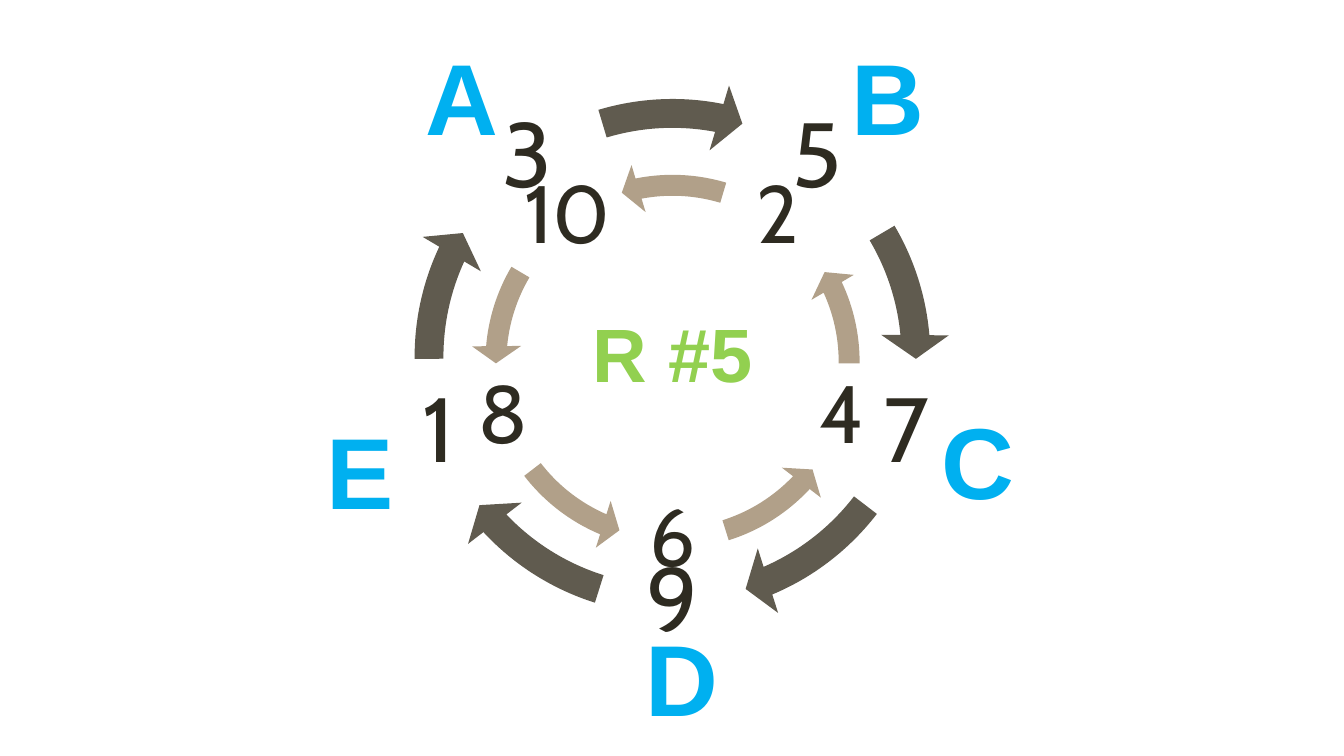
"""Build a five-corner rotation diagram with two rings of numbers and arrows."""
import math
from dataclasses import dataclass

from pptx import Presentation
from pptx.dml.color import RGBColor
from pptx.enum.shapes import MSO_SHAPE
from pptx.enum.text import MSO_ANCHOR, PP_ALIGN
from pptx.util import Inches, Pt

CLOCKWISE = MSO_SHAPE.CIRCULAR_ARROW
COUNTERCLOCKWISE = MSO_SHAPE.LEFT_CIRCULAR_ARROW
MIDDLE = MSO_ANCHOR.MIDDLE
CENTER = PP_ALIGN.CENTER


@dataclass(frozen=True)
class Theme:
    number_font: str = "Cabin"
    label_font: str = "Arial"
    number: str = "2E2B21"
    corner: str = "00B0F0"
    round_label: str = "92D050"
    outer_arrow: str = "605B4F"
    inner_arrow: str = "B1A089"
    outer_size: int = 65
    inner_size: int = 58
    corner_size: int = 72
    round_size: int = 54


THEME = Theme()
CENTER_X = 6.67

RINGS = [
    {
        "numbers": ["5", "7", "9", "1", "3"],
        "first_angle": -54, "step": 72,
        "center_y": 3.54, "radius": 2.44, "box": 1.47, "arrow_size": 5.5,
        "direction": CLOCKWISE,
        "head_tail_angles": [(354.88, 329.44), (66.91, 37.56), (136.84, 107.5),
                             (204.96, 179.52), (281.09, 253.31)],
        "color": THEME.outer_arrow, "size": THEME.outer_size,
    },
    {
        "numbers": ["10", "8", "6", "4", "2"],
        "first_angle": 234, "step": -72,
        "center_y": 3.59, "radius": 1.77, "box": 1.06, "arrow_size": 3.99,
        "direction": COUNTERCLOCKWISE,
        "head_tail_angles": [(185.11, 210.56), (113.09, 142.44), (43.16, 72.51),
                             (335.04, 0.49), (258.91, 286.69)],
        "color": THEME.inner_arrow, "size": THEME.inner_size,
    },
]
CORNERS = [("A", 4.12, 0.29), ("B", 8.35, 0.29), ("C", 9.24, 3.91),
           ("D", 6.3, 6.06), ("E", 3.14, 4.01)]
CORNER_BOX = (1.08, 1.31)
ROUND_LABEL = ("R #5", 5.78, 3, 1.8, 1.01)

ARROW_THICKNESS = 0.052
ARROW_HEAD_ANGLE = 3.36
ARROW_HEAD_WIDTH = 0.061
ADJUSTMENT_PER_DEGREE = 0.6


def add_label(shapes, wording, left, top, width, height, font_name, size, color, bold=False):
    label = shapes.add_textbox(Inches(left), Inches(top), Inches(width), Inches(height))
    frame = label.text_frame
    frame.text = wording
    frame.word_wrap = True
    font = frame.paragraphs[0].runs[0].font
    font.name = font_name
    font.size = Pt(size)
    font.bold = bold
    font.color.rgb = RGBColor.from_string(color)
    return frame


def add_number(shapes, ring, number, angle):
    box = ring["box"]
    left = CENTER_X + ring["radius"] * math.cos(math.radians(angle)) - box / 2
    top = ring["center_y"] + ring["radius"] * math.sin(math.radians(angle)) - box / 2
    frame = add_label(shapes, number, left, top, box, box,
                      THEME.number_font, ring["size"], THEME.number)
    frame.margin_left = frame.margin_right = frame.margin_top = frame.margin_bottom = 0
    frame.vertical_anchor = MIDDLE
    frame.paragraphs[0].alignment = CENTER
    frame.paragraphs[0].line_spacing = 0.9


def add_arrow(shapes, ring, head_angle, tail_angle):
    size = ring["arrow_size"]
    arrow = shapes.add_shape(ring["direction"], Inches(CENTER_X - size / 2),
                             Inches(ring["center_y"] - size / 2), Inches(size), Inches(size))
    settings = [ARROW_THICKNESS, ARROW_HEAD_ANGLE, head_angle * ADJUSTMENT_PER_DEGREE,
                tail_angle * ADJUSTMENT_PER_DEGREE, ARROW_HEAD_WIDTH]
    for index, setting in enumerate(settings):
        arrow.adjustments[index] = setting
    arrow.shadow.inherit = False
    arrow.fill.solid()
    arrow.fill.fore_color.rgb = RGBColor.from_string(ring["color"])
    arrow.line.fill.background()


def add_ring(slide, ring):
    shapes = slide.shapes.add_group_shape().shapes
    for position, (number, angles) in enumerate(zip(ring["numbers"], ring["head_tail_angles"])):
        add_number(shapes, ring, number, ring["first_angle"] + position * ring["step"])
        add_arrow(shapes, ring, *angles)


def main():
    deck = Presentation()
    deck.slide_width = Inches(13.33)
    deck.slide_height = Inches(7.5)
    slide = deck.slides.add_slide(deck.slide_layouts[6])
    for ring in RINGS:
        add_ring(slide, ring)
    for letter, left, top in CORNERS:
        add_label(slide.shapes, letter, left, top, *CORNER_BOX,
                  THEME.label_font, THEME.corner_size, THEME.corner, bold=True)
    add_label(slide.shapes, *ROUND_LABEL,
              THEME.label_font, THEME.round_size, THEME.round_label, bold=True)
    deck.save("out.pptx")


if __name__ == "__main__":
    main()
